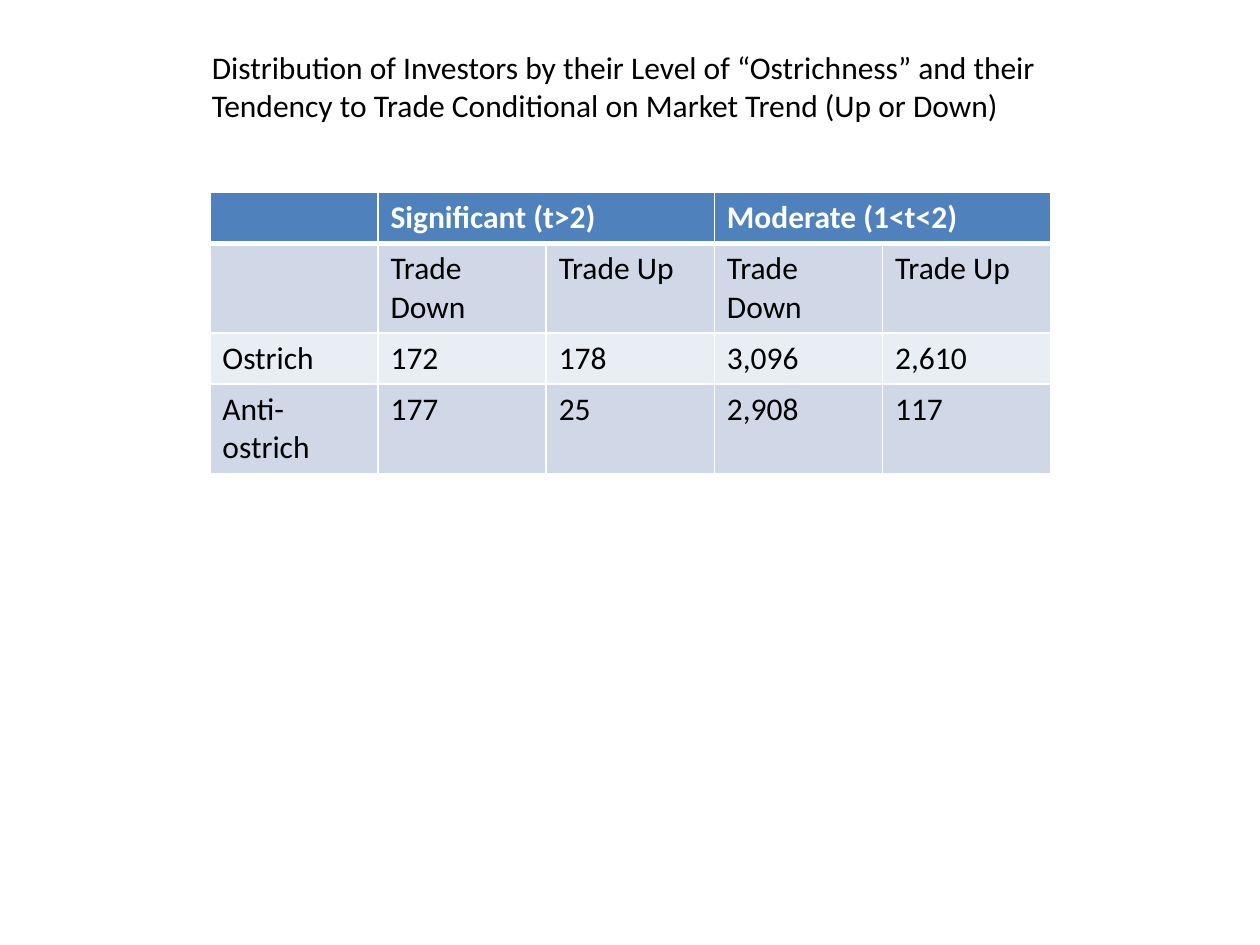
from lxml import etree
from pptx import Presentation, util as u
from pptx.dml import color
from pptx.enum import text
from pptx.oxml import ns


def rgb(value):
    return color.RGBColor.from_string(value)


class SlideBuilder:
    HEAD, BAND, LIGHT = "4F81BD", "D0D8E8", "E9EDF4"
    BORDER = "FFFFFF"
    HEAD_TEXT = {"name": "Calibri", "size": u.Pt(18), "bold": True, "color": "FFFFFF"}
    BODY_TEXT = {**HEAD_TEXT, "bold": False, "color": "000000"}

    def __init__(self, s):
        self.s = s

    def add_text(self, tf, content, style):
        r = tf.paragraphs[0].add_run()
        r.text = content
        for key, value in style.items():
            if key == "color":
                r.font.color.rgb = rgb(value)
            else:
                setattr(r.font, key, value)

    def title(self, content, x, y, w, h):
        sp = self.s.shapes.add_textbox(u.Cm(x), u.Cm(y), u.Cm(w), u.Cm(h))
        tf = sp.text_frame
        tf.word_wrap = True
        tf.auto_size = text.MSO_AUTO_SIZE.SHAPE_TO_FIT_TEXT
        self.add_text(tf, content, self.BODY_TEXT)

    def borders(self, cell, widths):
        tc_pr = cell._tc.get_or_add_tcPr()
        for side, width in widths.items():
            ln = etree.SubElement(tc_pr, ns.qn(f"a:ln{side}"), w=str(u.Pt(width)))
            fill = etree.SubElement(ln, ns.qn("a:solidFill"))
            etree.SubElement(fill, ns.qn("a:srgbClr"), val=self.BORDER)

    def table(self, rows, merges, x, y, col_width, heights):
        n_cols = len(rows[0])
        frame = self.s.shapes.add_table(
            len(rows), n_cols, u.Cm(x), u.Cm(y),
            u.Cm(col_width * n_cols), u.Cm(sum(heights)))
        tbl = frame.table
        for col in tbl.columns:
            col.width = u.Cm(col_width)
        for i, (values, height) in enumerate(zip(rows, heights)):
            tbl.rows[i].height = u.Cm(height)
            style = self.BODY_TEXT if i else self.HEAD_TEXT
            fill = (self.BAND if i % 2 else self.LIGHT) if i else self.HEAD
            # The rule under the header row is heavier
            widths = {"L": 1, "R": 1, "T": 3 if i == 1 else 1, "B": 1 if i else 3}
            for j, value in enumerate(values):
                cell = tbl.cell(i, j)
                self.borders(cell, widths)
                cell.fill.solid()
                cell.fill.fore_color.rgb = rgb(fill)
                if value:
                    self.add_text(cell.text_frame, value, style)
        for row, first, last in merges:
            tbl.cell(row, first).merge(tbl.cell(row, last))


def main():
    prs = Presentation()
    prs.slide_width, prs.slide_height = u.Cm(25.4), u.Cm(19.05)
    builder = SlideBuilder(prs.slides.add_slide(prs.slide_layouts[6]))

    # Investor counts
    rows = [
        ["", "Significant (t>2)", "", "Moderate (1<t<2)", ""],
        [""] + ["Trade Down", "Trade Up"] * 2,
        ["Ostrich", "172", "178", "3,096", "2,610"],
        ["Anti-ostrich", "177", "25", "2,908", "117"],
    ]
    single, double = 1.03, 1.78
    builder.table(rows, [(0, 1, 2), (0, 3, 4)], 4.23, 3.88, 3.39,
                  [single, double, single, double])

    # Heading
    builder.title(
        "Distribution of Investors by their Level of “Ostrichness” and their "
        "Tendency to Trade Conditional on Market Trend (Up or Down)",
        4.02, 0.85, 18.63, 1.8)

    prs.save("out.pptx")


if __name__ == "__main__":
    main()
